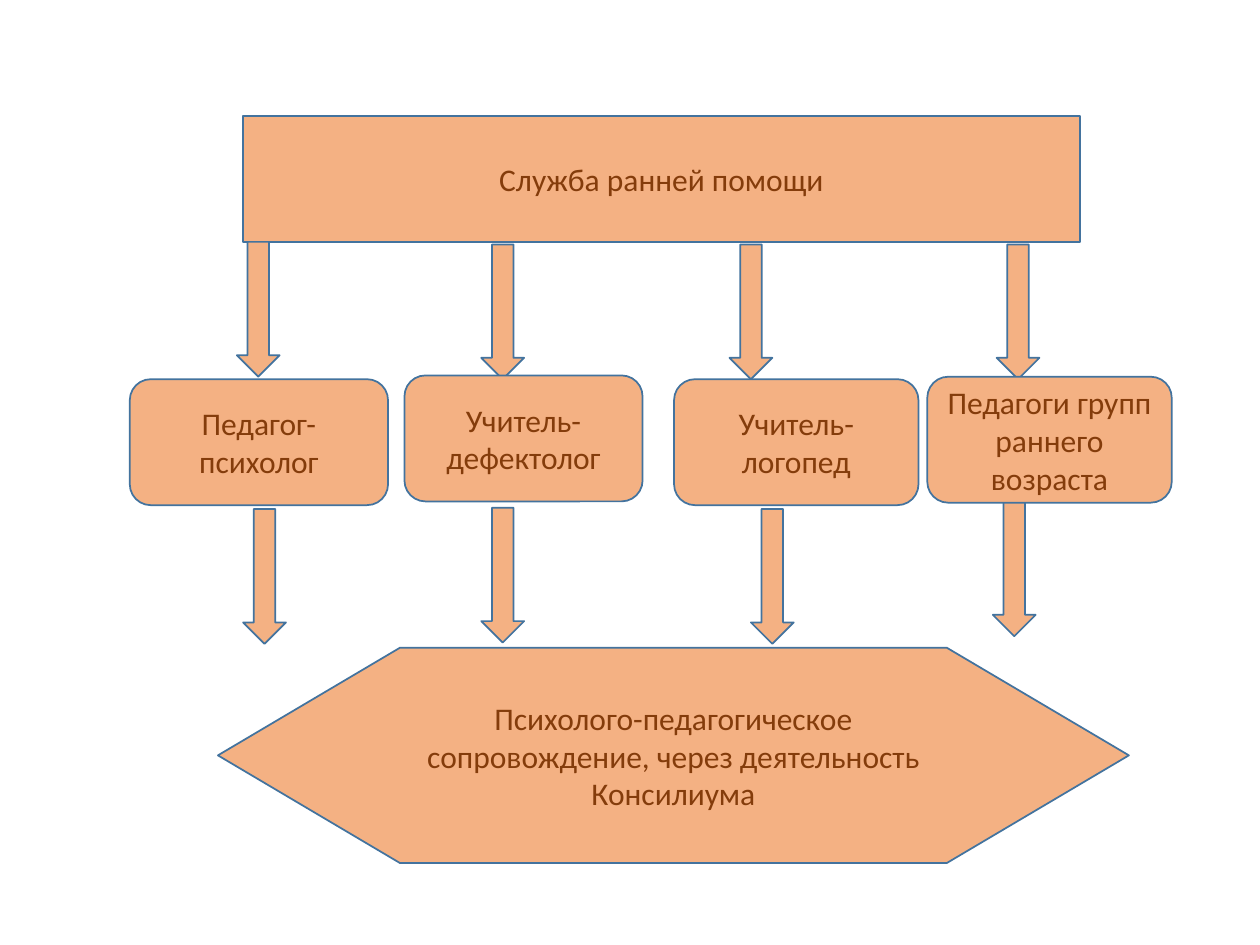
import pptx
import pptx.dml.color
import pptx.enum.shapes
import pptx.enum.text
import pptx.util

PEACH = pptx.dml.color.RGBColor(0xF4, 0xB1, 0x83)
STEEL = pptx.dml.color.RGBColor(0x43, 0x73, 0x9E)
BROWN = pptx.dml.color.RGBColor(0x84, 0x3C, 0x0B)
SHAPE = pptx.enum.shapes.MSO_SHAPE

# The slide is a grid of 100 columns by 75 rows of square cells.
CELL = pptx.util.Inches(0.1)
COLUMNS, ROWS = 100, 75

BOX_ROWS = 10
ARROW_COLUMNS, ARROW_ROWS = 3.4, 10.7

# Specialist, box (column, row, width), arrow from the service (column, row),
# arrow to the outcome (column, row)
SPECIALISTS = [
    ("Педагог-психолог", (10.3, 30.1, 20.5), (18.8, 19.2), (19.3, 40.4)),
    ("Учитель-дефектолог", (32.1, 29.8, 18.9), (38.2, 19.4), (38.2, 40.3)),
    ("Учитель-логопед", (53.5, 30.1, 19.4), (57.9, 19.4), (59.6, 40.4)),
    ("Педагоги групп раннего возраста", (73.6, 29.9, 19.4), (79.1, 19.4), (78.8, 39.8)),
]


def cells(count):
    return round(count * CELL)


def add_figure(slide, preset, column, row, width, height):
    figure = slide.shapes.add_shape(
        preset, cells(column), cells(row), cells(width), cells(height))
    figure.shadow.inherit = False
    figure.fill.solid()
    figure.fill.fore_color.rgb = PEACH
    figure.line.color.rgb = STEEL
    figure.line.width = pptx.util.Pt(1)
    return figure


def add_label(figure, wording):
    frame = figure.text_frame
    frame.word_wrap = True
    frame.vertical_anchor = pptx.enum.text.MSO_ANCHOR.MIDDLE
    frame.text = wording
    paragraph = frame.paragraphs[0]
    paragraph.alignment = pptx.enum.text.PP_ALIGN.CENTER
    font = paragraph.runs[0].font
    font.name = "Calibri"
    font.size = pptx.util.Pt(18)
    font.color.rgb = BROWN


def add_arrow(slide, column, row):
    add_figure(slide, SHAPE.DOWN_ARROW, column, row, ARROW_COLUMNS, ARROW_ROWS)


def add_specialist(slide, wording, column, row, width):
    box = add_figure(slide, SHAPE.ROUNDED_RECTANGLE, column, row, width, BOX_ROWS)
    add_label(box, wording)


def main():
    deck = pptx.Presentation()
    deck.slide_width = cells(COLUMNS)
    deck.slide_height = cells(ROWS)
    slide = deck.slides.add_slide(deck.slide_layouts.get_by_name("Blank"))

    service = add_figure(slide, SHAPE.RECTANGLE, 19.3, 9.2, 66.4, BOX_ROWS)
    add_label(service, "Служба ранней помощи")

    for wording, box, from_service, to_outcome in SPECIALISTS:
        add_arrow(slide, *from_service)
        add_arrow(slide, *to_outcome)
        add_specialist(slide, wording, *box)

    outcome = add_figure(slide, SHAPE.FLOWCHART_PREPARATION, 17.3, 51.4, 72.3, 17.1)
    add_label(outcome, "Психолого-педагогическое сопровождение, "
                       "через деятельность Консилиума")

    deck.save("out.pptx")


if __name__ == "__main__":
    main()
